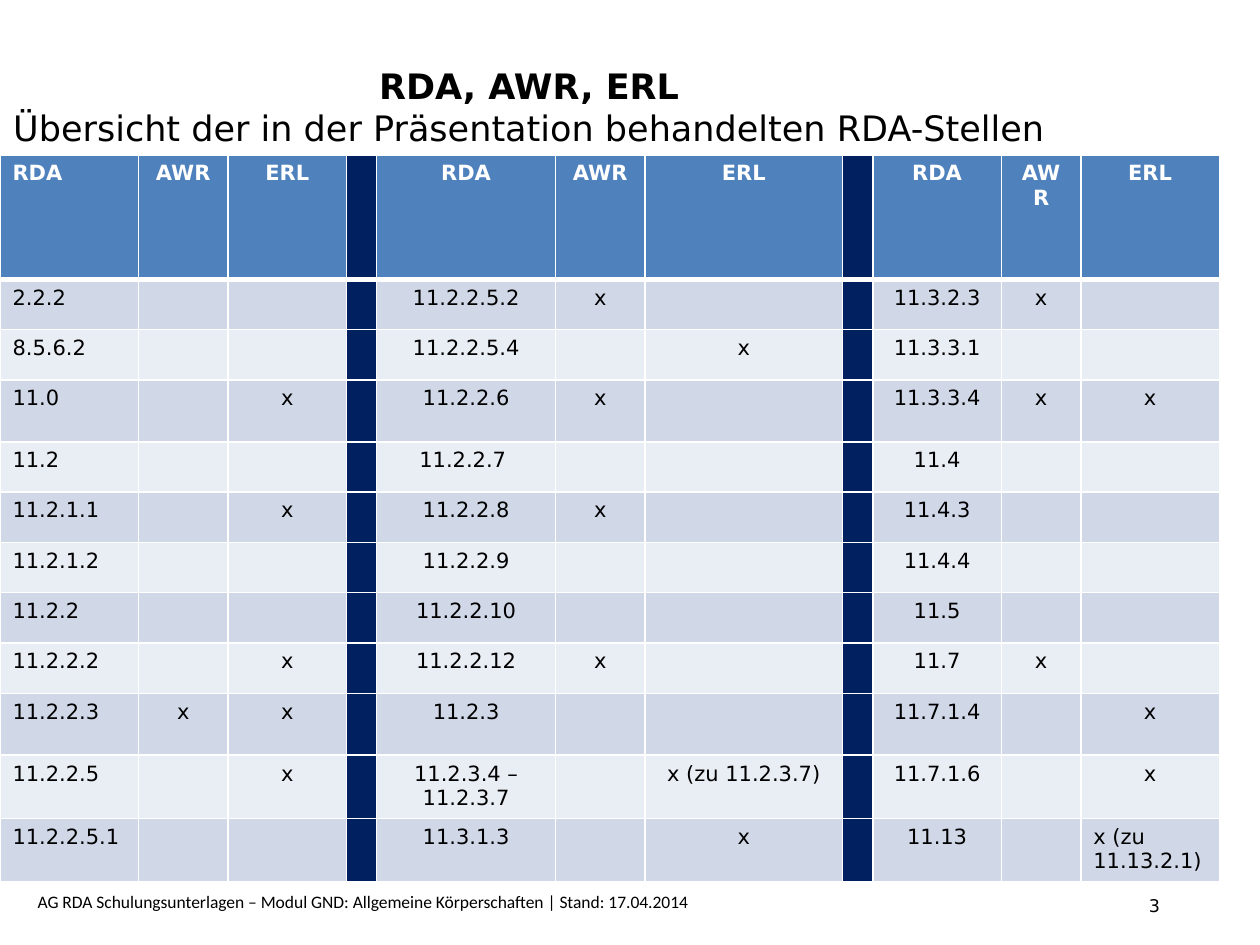
"""Builds the overview slide of the RDA sections covered."""
import lxml.etree
import pptx
import pptx.dml.color
import pptx.enum.text
import pptx.oxml.ns
import pptx.util

Pt = pptx.util.Pt
RGBColor = pptx.dml.color.RGBColor
ALIGN = pptx.enum.text.PP_ALIGN
ANCHOR = pptx.enum.text.MSO_ANCHOR
qn = pptx.oxml.ns.qn

BLACK = RGBColor(0x00, 0x00, 0x00)
WHITE = RGBColor(0xFF, 0xFF, 0xFF)
BLUE = RGBColor(0x4F, 0x81, 0xBD)
NAVY = RGBColor(0x00, 0x20, 0x60)
BANDS = (RGBColor(0xD0, 0xD8, 0xE8), RGBColor(0xE9, 0xED, 0xF4))

COLUMNS = (79.2, 51.1, 67.7, 17.3, 102.2, 51.1, 113, 17.3, 73.4, 45.4, 79.2)
SEPARATORS = (3, 7)
HEADER_HEIGHT, ROW_HEIGHT, TALL_HEIGHT = 71, 28.75, 35.4
TALL_ROWS = (3, 9, 10, 11)

GROUPS = (
    (("RDA", "AWR", "ERL"), ("RDA", "AWR", "ERL"), ("RDA", "AWR", "ERL")),
    (("2.2.2", "", ""), ("11.2.2.5.2", "x", ""), ("11.3.2.3", "x", "")),
    (("8.5.6.2", "", ""), ("11.2.2.5.4", "", "x"), ("11.3.3.1", "", "")),
    (("11.0", "", "x"), ("11.2.2.6", "x", ""), ("11.3.3.4", "x", "x")),
    (("11.2", "", ""), ("11.2.2.7 ", "", ""), ("11.4", "", "")),
    (("11.2.1.1", "", "x"), ("11.2.2.8", "x", ""), ("11.4.3", "", "")),
    (("11.2.1.2", "", ""), ("11.2.2.9", "", ""), ("11.4.4", "", "")),
    (("11.2.2", "", ""), ("11.2.2.10", "", ""), ("11.5", "", "")),
    (("11.2.2.2", "", "x"), ("11.2.2.12", "x", ""), ("11.7", "x", "")),
    (("11.2.2.3", "x", "x"), ("11.2.3", "", ""), ("11.7.1.4", "", "x")),
    (("11.2.2.5", "", "x"), ("11.2.3.4 –\n11.2.3.7", "", "x (zu 11.2.3.7)"),
     ("11.7.1.6", "", "x")),
    (("11.2.2.5.1", "", ""), ("11.3.1.3", "", "x"),
     ("11.13", "", "x (zu 11.13.2.1)")),
)


class SlideWriter:
    """Holds the text style and the current page."""

    def __init__(self, page, font="DejaVu Sans", size=12):
        self.page = page
        self.font = font
        self.size = size

    def format(self, frame, size, color=BLACK, bold=False, align=ALIGN.LEFT, font=None):
        """Applies one style to all text in a frame."""
        for para in frame.paragraphs:
            para.alignment = align
            for span in para.runs:
                span.font.name = font or self.font
                span.font.size = Pt(size)
                span.font.bold = bold
                span.font.color.rgb = color
            if not para.runs:
                lxml.etree.SubElement(para._p, qn("a:endParaRPr"), sz=str(size * 100))

    def text(self, text, left, top, width, height, size, anchor=ANCHOR.TOP, **style):
        """Adds a text box and returns its frame."""
        box = self.page.shapes.add_textbox(Pt(left), Pt(top), Pt(width), Pt(height))
        frame = box.text_frame
        frame.word_wrap = True
        frame.vertical_anchor = anchor
        frame.text = text
        self.format(frame, size, **style)
        return frame

    def borders(self, cell, top, bottom):
        """Draws white borders around a cell."""
        properties = cell._tc.get_or_add_tcPr()
        for side, width in (("L", 1), ("R", 1), ("T", top), ("B", bottom)):
            line = lxml.etree.SubElement(properties, qn("a:ln" + side), w=str(Pt(width)))
            fill = lxml.etree.SubElement(line, qn("a:solidFill"))
            lxml.etree.SubElement(fill, qn("a:srgbClr"), val=str(WHITE))

    def cell(self, cell, text, row, column):
        """Fills in one cell of the overview."""
        header = row == 0
        self.borders(cell, 3 if row == 1 else 1, 3 if header else 1)
        cell.fill.solid()
        if column in SEPARATORS:
            cell.fill.fore_color.rgb = NAVY
        else:
            cell.fill.fore_color.rgb = BLUE if header else BANDS[(row - 1) % 2]
        cell.text_frame.text = text
        left = column == 0 or text == "x (zu 11.13.2.1)"
        self.format(cell.text_frame, self.size, WHITE if header else BLACK, header,
                    ALIGN.LEFT if left else ALIGN.CENTER)

    def table(self, groups, left, top):
        """Adds the overview with a separator column between groups."""
        heights = [HEADER_HEIGHT] + [
            TALL_HEIGHT if row in TALL_ROWS else ROW_HEIGHT
            for row in range(1, len(groups))]
        table = self.page.shapes.add_table(
            len(groups), len(COLUMNS), Pt(left), Pt(top),
            Pt(sum(COLUMNS)), Pt(sum(heights))).table
        table.first_row = table.horz_banding = False
        for column, width in zip(table.columns, COLUMNS):
            column.width = Pt(width)
        for index, (first, second, third) in enumerate(groups):
            table.rows[index].height = Pt(heights[index])
            values = (*first, "", *second, "", *third)
            for column, value in enumerate(values):
                self.cell(table.cell(index, column), value, index, column)


def main():
    """Creates and saves the deck."""
    deck = pptx.Presentation()
    deck.slide_width, deck.slide_height = Pt(720), Pt(540)
    writer = SlideWriter(deck.slides.add_slide(deck.slide_layouts[6]))
    writer.text("3", 649.4, 507.6, 56.9, 23, 10)
    writer.text("AG RDA Schulungsunterlagen – Modul GND: Allgemeine Körperschaften"
                " | Stand: 17.04.2014", 14.4, 505.4, 504.7, 19.4, 10, font="Calibri")
    title = writer.text(
        "RDA, AWR, ERL\vÜbersicht der in der Präsentation behandelten RDA-Stellen",
        -21.6, 15.8, 648, 90, 20, ANCHOR.MIDDLE, align=ALIGN.CENTER)
    title.paragraphs[0].runs[0].font.bold = True
    writer.table(GROUPS, 0, 88.6)
    deck.save("out.pptx")


if __name__ == "__main__":
    main()
